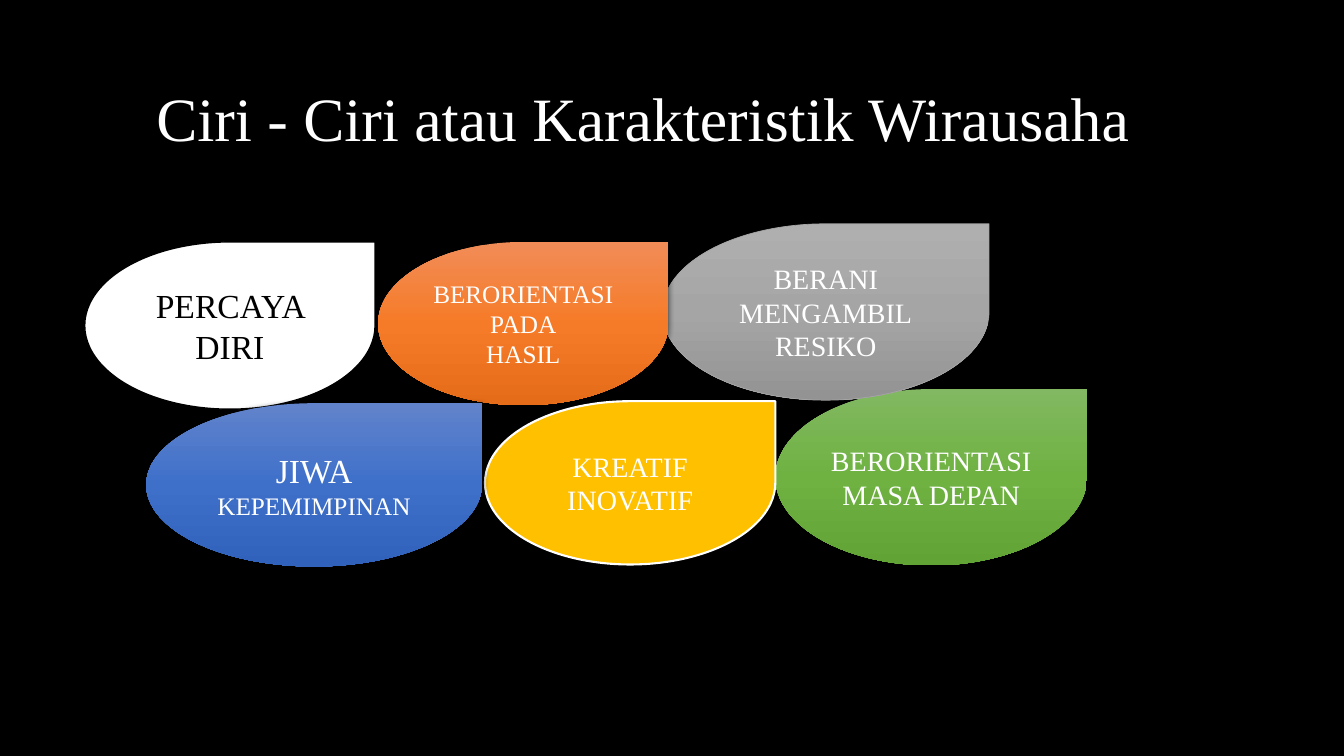
from copy import deepcopy

from lxml import etree
from pptx import Presentation
from pptx import util as u
from pptx.dml.color import RGBColor
from pptx.enum import shapes, text
from pptx.oxml import ns

PX = 9144  # EMU per px, 100 px to the inch
FONT = "Times New Roman"
COLORS = {
    "black": "000000",
    "white": "FFFFFF",
    "gold": "FFC000",
    "gray": "A5A5A5",
}
GRADIENTS = {
    "green": ("81B861", "6FB242", "62A336"),
    "silver": ("AFAFAF", "A5A5A5", "939393"),
    "orange": ("F18C57", "F67B28", "E56C19"),
    "blue": ("6183CB", "3E70CA", "3062BB"),
}


def rgb(name):
    return RGBColor.from_string(COLORS[name])


def write(frame, lines, size, color="white", align="CENTER", spacing=None):
    """Write one paragraph per (text, size) pair or plain text of the given size."""
    frame.word_wrap = True
    frame.auto_size = text.MSO_AUTO_SIZE.NONE
    frame.vertical_anchor = text.MSO_ANCHOR.MIDDLE
    for number, line in enumerate(lines):
        words, points = line if isinstance(line, tuple) else (line, size)
        para = frame.add_paragraph() if number else frame.paragraphs[0]
        para.alignment = text.PP_ALIGN[align]
        para.line_spacing = spacing
        span = para.add_run()
        span.text = words
        span.font.name = FONT
        span.font.size = u.Pt(points)
        span.font.color.rgb = rgb(color)


def fill_gradient(shape, stops):
    """Fill from top to bottom with three evenly spaced colours."""
    shape.fill.gradient()
    shape.fill.gradient_angle = 270
    stop_list = shape._element.spPr.find(".//" + ns.qn("a:gsLst"))
    stop_list.insert(1, deepcopy(stop_list[0]))
    for number, (stop, color) in enumerate(zip(shape.fill.gradient_stops, stops)):
        stop.position = number / 2
        stop.color.rgb = RGBColor.from_string(color)


def add_shadow(shape):
    effects = shape._element.spPr.find(ns.qn("a:effectLst"))
    shadow = etree.SubElement(
        effects, ns.qn("a:outerShdw"), blurRad=str(u.Pt(4.5)), dist=str(u.Pt(1.5)),
        dir="5400000", algn="ctr", rotWithShape="0")
    color = etree.SubElement(shadow, ns.qn("a:srgbClr"), val=COLORS["black"])
    etree.SubElement(color, ns.qn("a:alpha"), val="63000")


class Page:
    def __init__(self, deck):
        self.slide = deck.slides.add_slide(deck.slide_layouts[5])
        background = self.slide.background.fill
        background.solid()
        background.fore_color.rgb = rgb("black")

    def title(self, words, left, top, width, height):
        box = self.slide.shapes.title
        box.left, box.top, box.width, box.height = (
            n * PX for n in (left, top, width, height))
        write(box.text_frame, [words], 44, align="LEFT", spacing=0.9)

    def drop(self, place, fill, lines, size, color="white", line=None, shadow=False):
        shape = self.slide.shapes.add_shape(
            shapes.MSO_SHAPE.TEAR, *(n * PX for n in place))
        shape.shadow.inherit = False
        if fill in GRADIENTS:
            fill_gradient(shape, GRADIENTS[fill])
        else:
            shape.fill.solid()
            shape.fill.fore_color.rgb = rgb(fill)
        if line:
            line_color, points = line
            shape.line.color.rgb = rgb(line_color)
            shape.line.width = u.Pt(points)
        else:
            shape.line.fill.background()
        if shadow:
            add_shadow(shape)
        write(shape.text_frame, lines, size, color)


def main():
    deck = Presentation()
    deck.slide_width, deck.slide_height = u.Inches(13.33), u.Inches(7.5)
    page = Page(deck)
    page.title("Ciri - Ciri atau Karakteristik Wirausaha", 145, 38, 1070, 165)
    page.drop((769, 386, 309, 175), "green", ["BERORIENTASI", "MASA DEPAN"], 20,
              shadow=True)
    page.drop((657, 222, 324, 175), "silver", ["BERANI", "MENGAMBIL", "RESIKO"], 20,
              line=("gray", 0.5))
    page.drop((375, 240, 288, 162), "orange", ["BERORIENTASI", "PADA", "HASIL"], 18,
              shadow=True)
    page.drop((84, 240, 288, 166), "white", ["PERCAYA DIRI"], 24, color="black",
              line=("black", 1))
    page.drop((481, 398, 288, 162), "gold", ["KREATIF", "INOVATIF"], 20,
              line=("white", 1.5))
    page.drop((145, 400, 333, 162), "blue", [("JIWA", 24), "KEPEMIMPINAN"], 18,
              shadow=True)
    deck.save("out.pptx")


if __name__ == "__main__":
    main()
